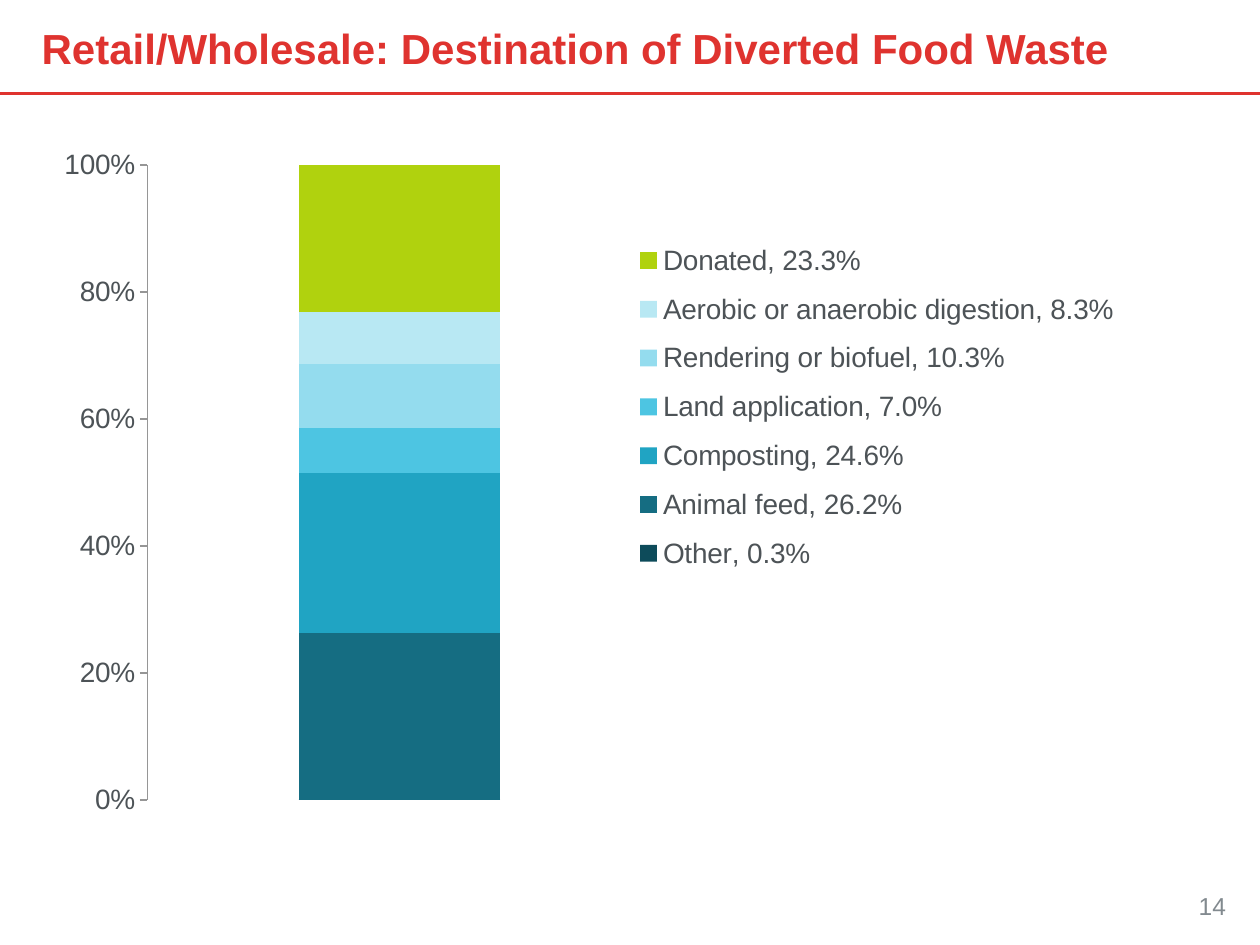
from dataclasses import dataclass

import pptx
import pptx.chart.data
import pptx.dml.color
import pptx.enum.chart
import pptx.enum.shapes
import pptx.enum.text
import pptx.oxml
import pptx.oxml.ns
import pptx.util
from pptx.dml.color import RGBColor
from pptx.util import Inches

RED = RGBColor(0xDF, 0x33, 0x2F)
TEXT_GREY = RGBColor(0x4D, 0x53, 0x57)
NUMBER_GREY = RGBColor(0x82, 0x8A, 0x8F)
AXIS_GREY = RGBColor(0x96, 0x96, 0x96)
FONT = "Arial"
CHART_WIDTH, CHART_HEIGHT = 9, 5.5


@dataclass
class Destination:
    name: str
    share: float
    color: RGBColor


@dataclass
class Label:
    text: str
    left: float
    top: float
    width: float
    height: float
    size: int
    color: RGBColor
    bold: bool = False
    align: pptx.enum.text.PP_ALIGN = pptx.enum.text.PP_ALIGN.LEFT
    anchor: pptx.enum.text.MSO_ANCHOR = pptx.enum.text.MSO_ANCHOR.TOP


# Bottom of the column first
DESTINATIONS = [
    Destination("Other", 0.3, RGBColor(0x0D, 0x4B, 0x5A)),
    Destination("Animal feed", 26.2, RGBColor(0x15, 0x6D, 0x82)),
    Destination("Composting", 24.6, RGBColor(0x20, 0xA4, 0xC3)),
    Destination("Land application", 7.0, RGBColor(0x4D, 0xC5, 0xE2)),
    Destination("Rendering or biofuel", 10.3, RGBColor(0x94, 0xDC, 0xEE)),
    Destination("Aerobic or anaerobic digestion", 8.3, RGBColor(0xB8, 0xE8, 0xF3)),
    Destination("Donated", 23.3, RGBColor(0xB0, 0xD2, 0x0E)),
]

LABELS = [
    Label("Retail/Wholesale: Destination of Diverted Food Waste",
          0.33, 0, 9.31, 0.75, 24, RED, bold=True,
          anchor=pptx.enum.text.MSO_ANCHOR.MIDDLE),
    Label("14", 7.4, 7.07, 2.33, 0.33, 14, NUMBER_GREY,
          align=pptx.enum.text.PP_ALIGN.RIGHT),
]


def add_label(slide, label: Label) -> None:
    box = slide.shapes.add_textbox(Inches(label.left), Inches(label.top),
                                   Inches(label.width), Inches(label.height))
    frame = box.text_frame
    frame.word_wrap = True
    frame.vertical_anchor = label.anchor
    frame.margin_left = frame.margin_right = 0
    frame.margin_top = frame.margin_bottom = 0
    paragraph = frame.paragraphs[0]
    paragraph.alignment = label.align
    run = paragraph.add_run()
    run.text = label.text
    run.font.name = FONT
    run.font.size = pptx.util.Pt(label.size)
    run.font.bold = label.bold
    run.font.color.rgb = label.color


def add_title_rule(slide) -> None:
    rule = slide.shapes.add_connector(
        pptx.enum.shapes.MSO_CONNECTOR.STRAIGHT,
        Inches(0), Inches(0.74), Inches(10), Inches(0.74))
    rule.line.color.rgb = RED
    rule.line.width = pptx.util.Pt(1.5)
    properties = rule._element.spPr
    properties.append(pptx.oxml.parse_xml(
        f"<a:effectLst {pptx.oxml.ns.nsdecls('a')}/>"))


def manual_layout(left: float, top: float, width: float, height: float,
                  inner: bool = False):
    """Layout element for a place given in inches within the chart."""
    target = '<c:layoutTarget val="inner"/>' if inner else ""
    fractions = (left / CHART_WIDTH, top / CHART_HEIGHT,
                 width / CHART_WIDTH, height / CHART_HEIGHT)
    sizes = "".join(f'<c:{key} val="{value:.4f}"/>'
                    for key, value in zip("xywh", fractions))
    return pptx.oxml.parse_xml(
        f"<c:layout {pptx.oxml.ns.nsdecls('c')}><c:manualLayout>{target}"
        f'<c:xMode val="edge"/><c:yMode val="edge"/>{sizes}'
        "</c:manualLayout></c:layout>")


def add_destination_chart(slide, destinations: list[Destination]) -> None:
    data = pptx.chart.data.CategoryChartData(number_format="0")
    data.categories = ["1"]
    for destination in destinations:
        data.add_series(f"{destination.name}, {destination.share:.1f}%",
                        [round(destination.share)])
    chart = slide.shapes.add_chart(
        pptx.enum.chart.XL_CHART_TYPE.COLUMN_STACKED_100,
        Inches(0.33), Inches(1.08),
        Inches(CHART_WIDTH), Inches(CHART_HEIGHT), data).chart
    chart.has_title = False
    chart.font.name = FONT
    chart.font.size = pptx.util.Pt(16)
    chart.font.color.rgb = TEXT_GREY

    # Column
    plot = chart.plots[0]
    plot.gap_width = 150
    plot.overlap = 100
    plot.vary_by_categories = False
    for series, destination in zip(plot.series, destinations):
        series.format.fill.solid()
        series.format.fill.fore_color.rgb = destination.color

    # Axes
    chart.category_axis.visible = False
    share_axis = chart.value_axis
    share_axis.has_major_gridlines = False
    share_axis.major_tick_mark = pptx.enum.chart.XL_TICK_MARK.OUTSIDE
    share_axis.major_unit = 0.2
    share_axis.tick_labels.number_format = "0%"
    share_axis.tick_labels.number_format_is_linked = False
    share_axis.format.line.color.rgb = AXIS_GREY
    share_axis.format.line.width = pptx.util.Pt(0.75)

    # Legend
    chart.has_legend = True
    legend = chart.legend
    legend.position = pptx.enum.chart.XL_LEGEND_POSITION.RIGHT
    legend.include_in_layout = False
    legend.font.size = pptx.util.Pt(16)
    legend.font.name = FONT
    legend.font.color.rgb = TEXT_GREY

    # Places of the plot and the legend
    plot_area = chart._chartSpace.chart.plotArea
    for parent, position, layout in (
            (plot_area, 0, manual_layout(0.84, 0.23, 4, 5.04, inner=True)),
            (legend._element, 1, manual_layout(4.58, 0.72, 4.1, 2.86))):
        for old in parent.findall(pptx.oxml.ns.qn("c:layout")):
            parent.remove(old)
        parent.insert(position, layout)


def main() -> None:
    deck = pptx.Presentation()
    deck.slide_width = Inches(10)
    deck.slide_height = Inches(7.5)
    slide = deck.slides.add_slide(deck.slide_layouts[6])
    add_title_rule(slide)
    for label in LABELS:
        add_label(slide, label)
    add_destination_chart(slide, DESTINATIONS)
    deck.save("out.pptx")


if __name__ == "__main__":
    main()
